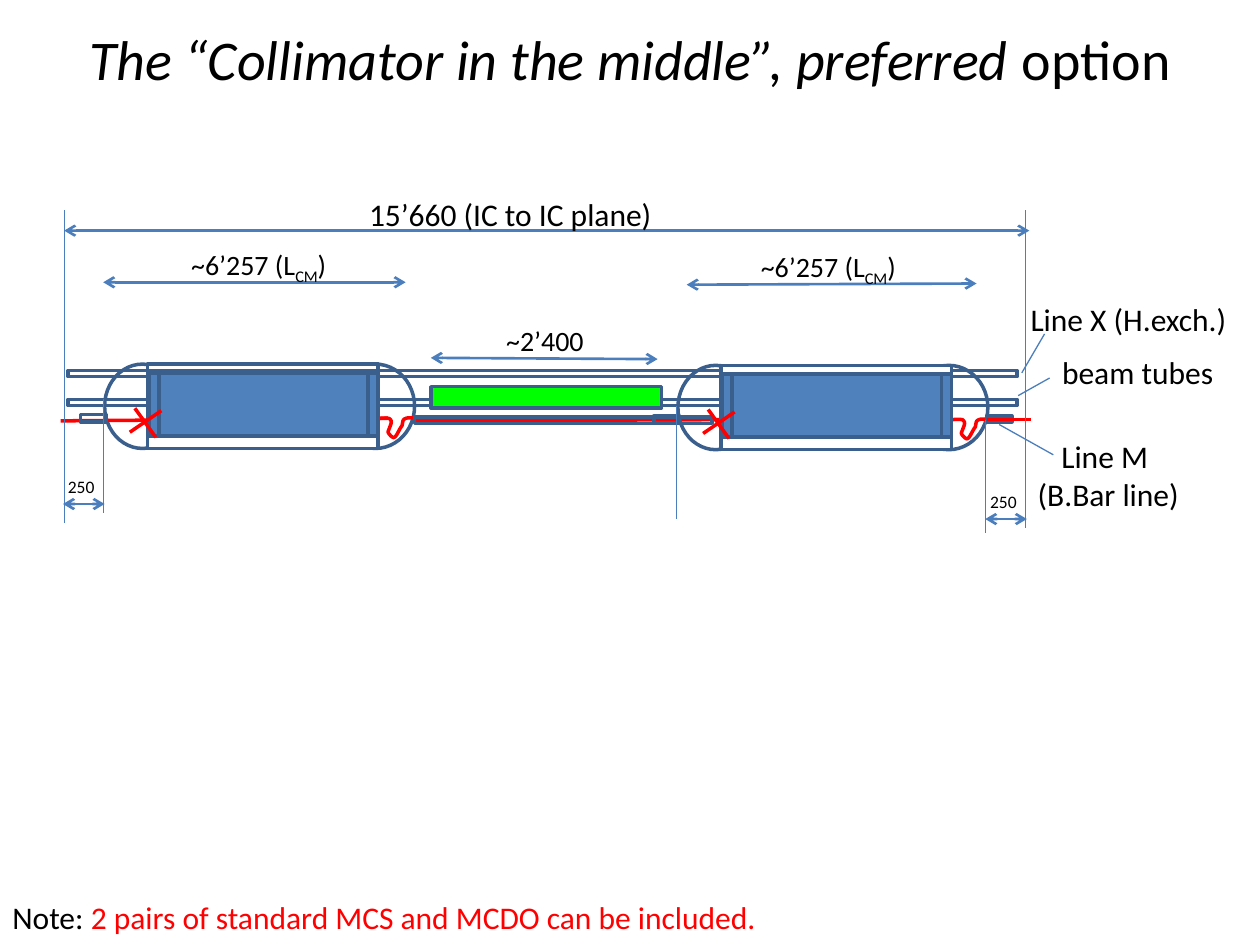
from pptx import Presentation
from pptx.dml.color import RGBColor
from pptx.enum.shapes import MSO_CONNECTOR, MSO_SHAPE
from pptx.enum.text import MSO_ANCHOR, MSO_AUTO_SIZE, PP_ALIGN
from pptx.oxml.ns import qn
from pptx.util import Pt
from lxml import etree

RECT, OVAL, STRAIGHT = MSO_SHAPE.RECTANGLE, MSO_SHAPE.OVAL, MSO_CONNECTOR.STRAIGHT
LEFT, CENTER, MIDDLE = PP_ALIGN.LEFT, PP_ALIGN.CENTER, MSO_ANCHOR.MIDDLE
FIT = MSO_AUTO_SIZE.SHAPE_TO_FIT_TEXT

THEME = {
    "font": "Calibri", "title": 32, "label": 18, "dimension": 16, "small": 10,
    "ink": "000000", "red": "FF0000", "edge": "3A5F8C", "guide": "4B7EBC",
    "magnet": "4F81BD", "shell": "FFFFFF", "collimator": "00FF00",
    "thin": 0.75, "medium": 1.5, "thick": 2,
}

TITLE = [[("The “Collimator in the middle”, preferred ", {"italic": True}),
          ("option", {"italic": False})]]
CRYO_LENGTH = [[("~6’257 (L", {}), ("CM", {"sub": True}), (")", {})]]
LABELS = [
    ((203.8, 108, 177.8, 28.8), [[("15’660 (IC to IC plane)", {})]], "label", LEFT),
    ((31.7, 268.6, 30.2, 19.4), [[("250", {})]], "small", LEFT),
    ((558.7, 277.2, 30.2, 19.4), [[("250", {})]], "small", LEFT),
    ((282.2, 181.4, 59.8, 26.6), [[("~2’400", {})]], "dimension", LEFT),
    ((102.2, 138.2, 94.3, 26.6), CRYO_LENGTH, "dimension", LEFT),
    ((427.7, 139, 94.3, 26.6), CRYO_LENGTH, "dimension", LEFT),
    ((599.8, 198, 102.2, 28.8), [[("beam tubes", {})]], "label", LEFT),
    ((581.8, 167.8, 132.5, 28.8), [[("Line X (H.exch.)", {})]], "label", LEFT),
    ((585.4, 246.2, 95.8, 51.1), [[("Line M ", {})], [("(B.Bar line)", {})]], "label", CENTER),
    ((0, 509.8, 445, 28.8),
     [[("Note: ", {}), ("2 pairs of standard MCS and MCDO can be included.", {"color": "red"})]],
     "label", LEFT),
]

DIMENSIONS = [
    (36.7, 131.8, 588.2, 131.8), (36, 288, 59.8, 288), (563, 296.6, 586.8, 296.6),
    (246.2, 204.5, 375.8, 205.2), (59, 161.3, 231.8, 161.3), (392.4, 162.7, 558, 162),
]
PLANES = [(36.7, 120.2, 257.8), (586.1, 120.2, 257.8)]
EXTENSIONS = [(59, 228.2), (36.7, 234), (386.6, 231.8), (563, 239.8), (586.1, 236.9)]
EXTENSION_HEIGHT = 64.8
LEADERS = [(596.9, 190.8, 583.9, 213.1), (599.8, 216, 581.8, 226.1), (601.9, 259.9, 571, 242.6)]
BUS_BARS = [(236.2, 240.5, 418.3, 239.8), (34.6, 240.5, 221.8, 239)]
END_BUS_BAR = (563.8, 239.8, 589, 239.8)
TUBES = [(236.9, 238.3, 169.9, 3.6), (38.9, 228.2, 542.2, 3.6), (38.9, 211.7, 542.2, 3.6)]
STUBS = [(46.1, 236.9, 14.4, 4.3), (373.7, 237.6, 14.4, 4.3), (563.8, 237.6, 14.4, 3.6)]
COLLIMATOR = (246.2, 221, 131.8, 12.2)

MODULES = [(59.8, 208.1), (387.4, 208.8)]
SHELL = [(OVAL, 132.5, 44.6, None), (OVAL, 0, 43.2, None), (RECT, 24.5, 131.8, "shell")]
SHELL_HEIGHT = 48.2
MAGNET = [(31, 120.2), (25.2, 5.8), (150.5, 5.8)]
MAGNET_TOP, MAGNET_HEIGHT = 5, 36
CROSS = [(17.3, 25.2, 29.2, 41.8), (14.4, 38.9, 32.4, 26.6)]
LOOP_START = (155.5, 31)
LOOP = [
    [(3.6, 0), (7.2, -0.7), (7.9, 0.7)], [(9.4, 2.2), (6.5, 6.5), (6.5, 7.9)],
    [(7.2, 9.4), (9.4, 11.5), (10.1, 10.8)], [(11.5, 10.1), (13, 5.8), (14.4, 4.3)],
    [(15.1, 2.2), (14.4, 0.7), (16.6, 0)], [(18, -0.7), (22.3, 0), (25.9, 0)],
]
CURVE_STEPS = 8


def rgb(name):
    return RGBColor.from_string(THEME[name])


def write(frame, paragraphs, size="label", align=LEFT):
    for index, runs in enumerate(paragraphs):
        paragraph = frame.paragraphs[0] if index == 0 else frame.add_paragraph()
        paragraph.alignment = align
        for words, look in runs:
            run = paragraph.add_run()
            run.text = words
            run.font.name, run.font.size = THEME["font"], Pt(THEME[size])
            run.font.color.rgb = rgb(look.get("color", "ink"))
            run.font.italic = look.get("italic")
            if look.get("sub"):
                run.font._element.set("baseline", "-25000")


def block(slide, kind, box, fill=None):
    part = slide.shapes.add_shape(kind, *map(Pt, box))
    part.shadow.inherit = False
    if fill:
        part.fill.solid()
        part.fill.fore_color.rgb = rgb(fill)
    else:
        part.fill.background()
    part.line.color.rgb, part.line.width = rgb("edge"), Pt(THEME["thick"])


def stroke(slide, ends, color="guide", weight="thin", arrows=False):
    link = slide.shapes.add_connector(STRAIGHT, *map(Pt, ends))
    link.line.color.rgb, link.line.width = rgb(color), Pt(THEME[weight])
    if arrows:
        for tag in ("a:headEnd", "a:tailEnd"):
            etree.SubElement(link.line._ln, qn(tag), type="arrow")
    etree.SubElement(link._element.spPr, qn("a:effectLst"))


def curve_points(start, segments):
    for first, second, end in segments:
        for step in range(1, CURVE_STEPS + 1):
            t = step / CURVE_STEPS
            weights = ((1 - t) ** 3, 3 * t * (1 - t) ** 2, 3 * t * t * (1 - t), t ** 3)
            corners = (start, first, second, end)
            yield tuple(sum(w * c[axis] for w, c in zip(weights, corners)) for axis in (0, 1))
        start = end


def expansion_loop(slide, x, y):
    builder = slide.shapes.build_freeform(Pt(x), Pt(y))
    points = [(Pt(x + dx), Pt(y + dy)) for dx, dy in curve_points((0, 0), LOOP)]
    builder.add_line_segments(points, close=False)
    loop = builder.convert_to_shape()
    loop.shadow.inherit = False
    loop.fill.background()
    loop.line.color.rgb, loop.line.width = rgb("red"), Pt(THEME["thick"])


def module_shell(slide, x, y):
    for kind, dx, width, fill in SHELL:
        block(slide, kind, (x + dx, y, width, SHELL_HEIGHT), fill)
    expansion_loop(slide, x + LOOP_START[0], y + LOOP_START[1])


def module_core(slide, x, y):
    for dx, width in MAGNET:
        block(slide, RECT, (x + dx, y + MAGNET_TOP, width, MAGNET_HEIGHT), "magnet")
    for x1, y1, x2, y2 in CROSS:
        stroke(slide, (x + x1, y + y1, x + x2, y + y2), "red", "thick")


def main():
    deck = Presentation()
    deck.slide_width, deck.slide_height = Pt(720), Pt(540)
    slide = deck.slides.add_slide(deck.slide_layouts[5])
    title = slide.shapes.title
    title.left, title.top, title.width, title.height = map(Pt, (36, 12.2, 648, 41.8))
    title.text_frame.vertical_anchor = MIDDLE
    write(title.text_frame, TITLE, size="title", align=CENTER)

    left_module, right_module = MODULES
    module_shell(slide, *left_module)
    for bus_bar in BUS_BARS:
        stroke(slide, bus_bar, "red", "thick")
    for tube in TUBES:
        block(slide, RECT, tube)
    block(slide, RECT, COLLIMATOR, "collimator")
    module_core(slide, *left_module)
    module_shell(slide, *right_module)
    module_core(slide, *right_module)
    for stub in STUBS:
        block(slide, RECT, stub)
    stroke(slide, END_BUS_BAR, "red", "thick")

    for x, top, bottom in PLANES:
        stroke(slide, (x, top, x, bottom))
    for x, top in EXTENSIONS:
        stroke(slide, (x, top, x, top + EXTENSION_HEIGHT))
    for leader in LEADERS:
        stroke(slide, leader)
    for dimension in DIMENSIONS:
        stroke(slide, dimension, weight="medium", arrows=True)
    for box, paragraphs, size, align in LABELS:
        frame = slide.shapes.add_textbox(*map(Pt, box)).text_frame
        frame.word_wrap, frame.auto_size = False, FIT
        write(frame, paragraphs, size=size, align=align)
    deck.save("out.pptx")


if __name__ == "__main__":
    main()
